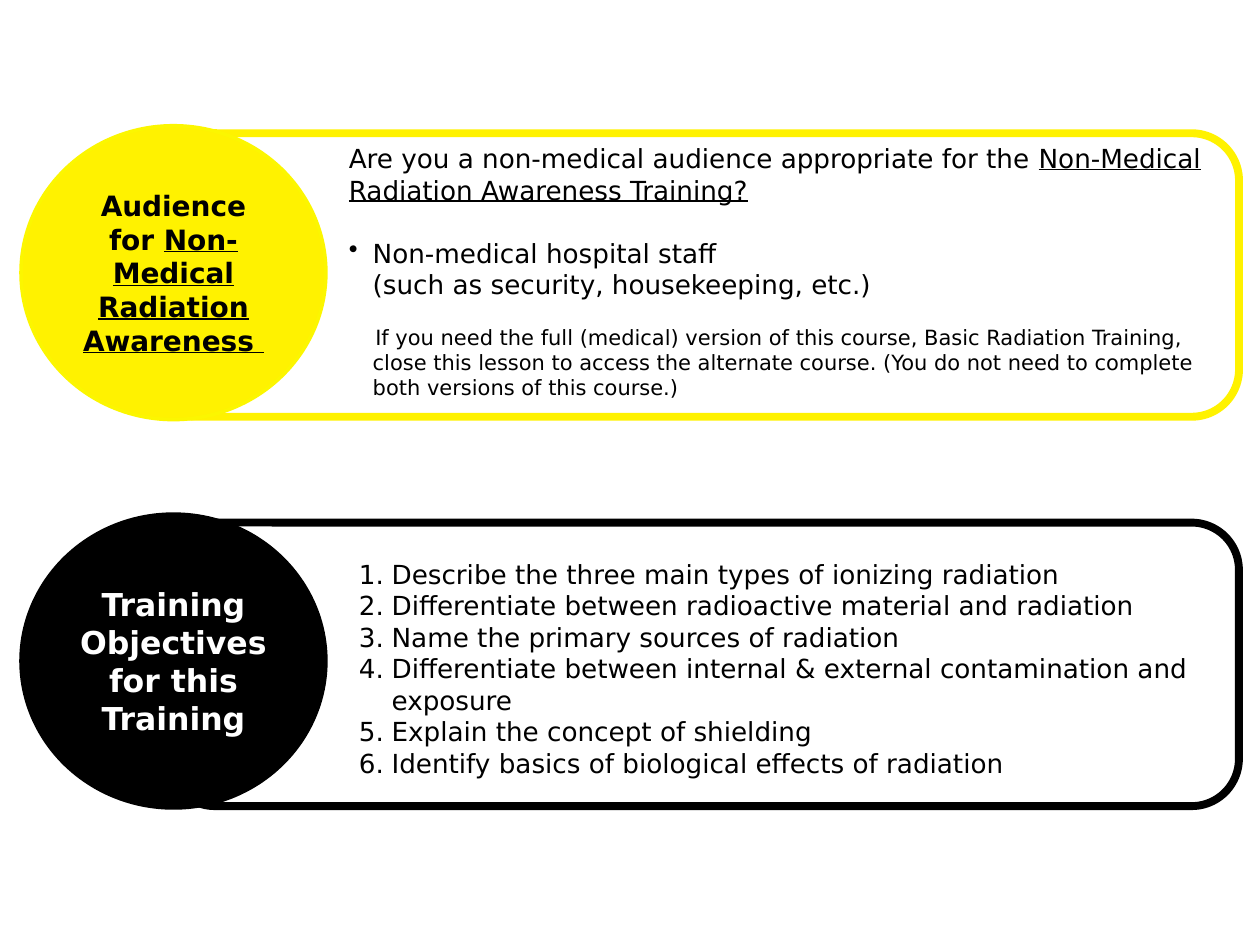
from lxml.etree import SubElement
from pptx import Presentation
from pptx.dml.color import RGBColor
from pptx.enum.shapes import MSO_SHAPE
from pptx.enum.text import MSO_ANCHOR, PP_ALIGN
from pptx.oxml.ns import qn
from pptx.util import Inches, Pt

FONT = "DejaVu Sans"
INK = {"black": "000000", "white": "FFFFFF", "yellow": "FFF200", "rim": "FCF600"}
WIDE, HIGH = 10, 7.5
LEFT, RIGHT = WIDE / 60, WIDE * 59 / 60
DISC = (WIDE * 0.242, HIGH * 0.311)
RING = HIGH * 0.3


def hue(name):
    return RGBColor.from_string(INK[name])


def place(box):
    return [Inches(side) for side in box]


def style(run, size, color="black", bold=False, under=False):
    font = run.font
    font.name, font.size = FONT, Pt(size)
    font.bold, font.underline = bold, under
    font.color.rgb = hue(color)


def shape(slide, kind, box, line, width, fill=None):
    item = slide.shapes.add_shape(kind, *place(box))
    item.shadow.inherit = False
    if fill:
        item.fill.solid()
        item.fill.fore_color.rgb = hue(fill)
    else:
        item.fill.background()
    item.line.color.rgb = hue(line)
    item.line.width = Pt(width)
    return item


def write(para, parts, size, color="black", bold=False):
    for text, under in parts:
        run = para.add_run()
        run.text = text
        style(run, size, color, bold, under)


def indent(para, margin, first, tag=None, **mark):
    props = para._p.get_or_add_pPr()
    props.set("marL", str(Inches(margin)))
    props.set("indent", str(Inches(first)))
    if tag:
        SubElement(props, qn(tag), mark)


def frame(slide, box):
    text = slide.shapes.add_textbox(*place(box)).text_frame
    text.word_wrap = True
    return text


def add_ring(slide, left, top, color):
    box = (left, top, RIGHT - left, RING)
    shape(slide, MSO_SHAPE.ROUNDED_RECTANGLE, box, color, 4.5)


def add_disc(slide, top, fill, rim, parts, size, color):
    disc = shape(slide, MSO_SHAPE.OVAL, (LEFT, top, *DISC), rim, 2, fill)
    text = disc.text_frame
    text.word_wrap = True
    text.vertical_anchor = MSO_ANCHOR.MIDDLE
    para = text.paragraphs[0]
    para.alignment = PP_ALIGN.CENTER
    write(para, parts, size, color, True)


def add_goals(slide, box, goals):
    text = frame(slide, box)
    for index, goal in enumerate(goals):
        para = text.add_paragraph() if index else text.paragraphs[0]
        write(para, [(goal, False)], 15)
        indent(para, 0.26, -0.26, "a:buAutoNum", type="arabicPeriod")


def add_crowd(slide, box):
    text = frame(slide, box)
    ask = text.paragraphs[0]
    write(ask, [("Are you a non-medical audience appropriate for the ", False),
                ("Non-Medical Radiation Awareness Training?", True)], 15)
    staff = text.add_paragraph()
    staff.space_before = Pt(18)
    write(staff, [("Non-medical hospital staff", False)], 15)
    indent(staff, 0.19, -0.19, "a:buChar", char="•")
    such = text.add_paragraph()
    write(such, [("(such as security, housekeeping, etc.)", False)], 15)
    indent(such, 0.19, 0)
    note = text.add_paragraph()
    note.space_before = Pt(14)
    write(note, [("If you need the full (medical) version of this course, "
                  "Basic Radiation Training, close this lesson to access the "
                  "alternate course. (You do not need to complete both "
                  "versions of this course.)", False)], 12)
    indent(note, 0.19, 0.02)


def main():
    deck = Presentation()
    deck.slide_width, deck.slide_height = Inches(WIDE), Inches(HIGH)
    slide = deck.slides.add_slide(deck.slide_layouts[6])
    add_ring(slide, WIDE * 0.133, HIGH * 0.553, "black")
    add_ring(slide, WIDE * 0.117, HIGH * 0.141, "yellow")
    add_disc(slide, HIGH * 0.133, "yellow", "rim",
             [("Audience for ", False),
              ("Non-Medical Radiation Awareness ", True)], 16, "black")
    add_disc(slide, HIGH * 0.544, "black", "black",
             [("Training Objectives for this Training", False)], 18, "white")
    add_goals(slide, (WIDE * 0.275, HIGH * 0.584, WIDE * 0.733, HIGH * 0.249), [
        "Describe the three main types of ionizing radiation",
        "Differentiate between radioactive material and radiation",
        "Name the primary sources of radiation",
        "Differentiate between internal & external contamination and exposure",
        "Explain the concept of shielding",
        "Identify basics of biological effects of radiation",
    ])
    add_crowd(slide, (WIDE * 0.267, HIGH * 0.144, WIDE * 0.717, HIGH * 0.323))
    deck.save("out.pptx")


if __name__ == "__main__":
    main()
